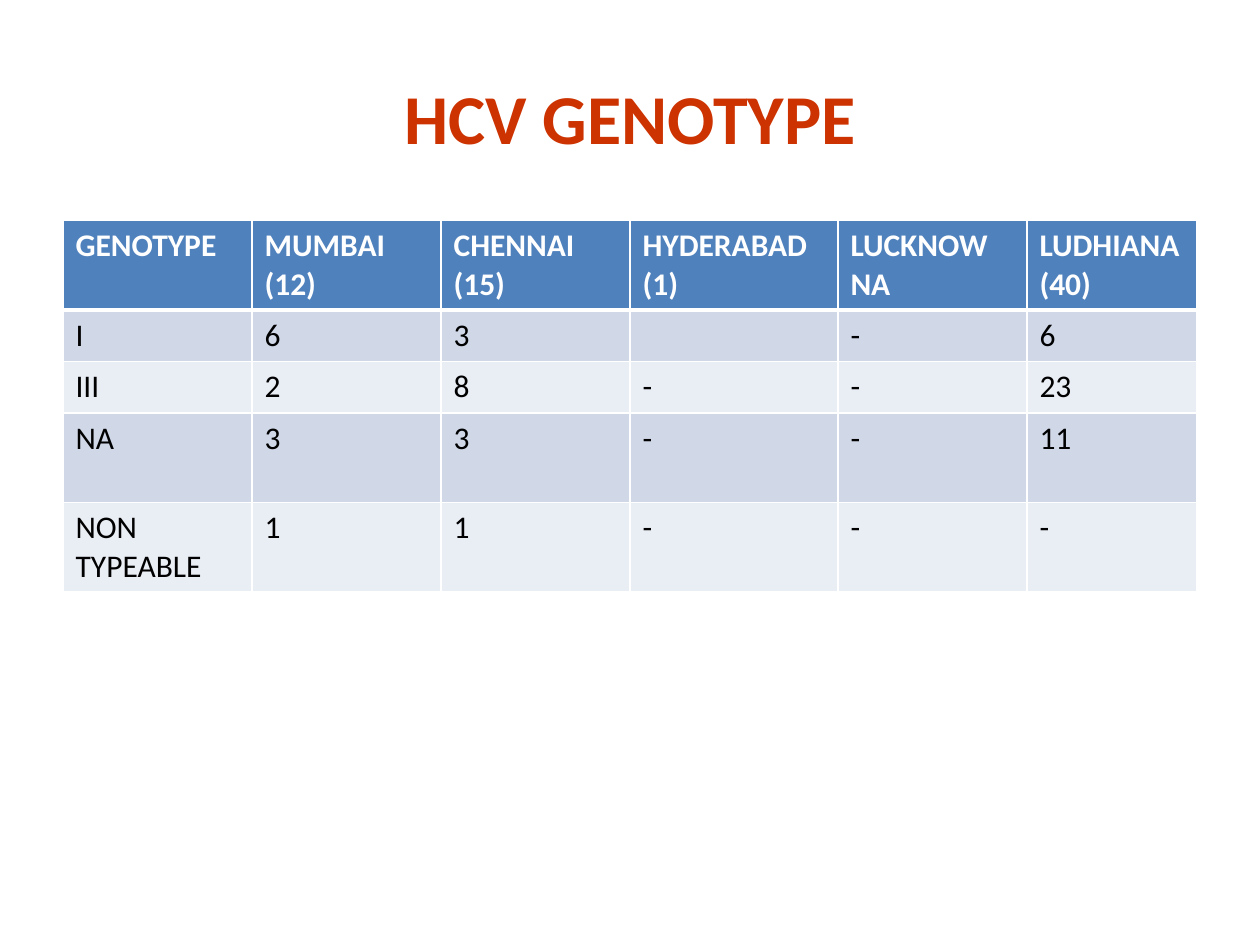
import pptx
import pptx.util
import pptx.dml.color
import pptx.enum.text
import pptx.oxml
import pptx.oxml.ns

Inches = pptx.util.Inches

# Content: each cell is a list of paragraphs
TITLE = "HCV GENOTYPE"
HEADER = [["GENOTYPE"], ["MUMBAI (12)"], ["CHENNAI", "(15)"],
          ["HYDERABAD (1)"], ["LUCKNOW", "NA"], ["LUDHIANA", "(40)"]]
BODY = [
    ["I", "6", "3", "", "-", "6"],
    ["III", "2", "8", "-", "-", "23"],
    ["NA", "3", "3", "-", "-", "11"],
    ["NON TYPEABLE", "1", "1", "-", "-", "-"],
]
COLUMN_WIDTHS = [1.5, 1.5, 1.5, 1.65, 1.5, 1.35]
ROW_HEIGHTS = [0.71, 0.41, 0.41, 0.71, 0.71]
HEADER_FILL = "4F81BD"
BAND_FILLS = ["D0D8E8", "E9EDF4"]


def color(value):
    return pptx.dml.color.RGBColor.from_string(value)


def add_text(paragraph, text, size, text_color, bold):
    run = paragraph.add_run()
    run.text = text
    run.font.name = "Calibri"
    run.font.size = pptx.util.Pt(size)
    run.font.bold = bold
    run.font.color.rgb = color(text_color)


def set_borders(cell, bottom_width, top_width):
    properties = cell._tc.get_or_add_tcPr()
    widths = {"lnL": 1, "lnR": 1, "lnT": top_width, "lnB": bottom_width}
    for position, (side, width) in enumerate(widths.items()):
        line = pptx.oxml.parse_xml(
            f'<a:{side} {pptx.oxml.ns.nsdecls("a")} w="{pptx.util.Pt(width)}">'
            f'<a:solidFill><a:srgbClr val="FFFFFF"/></a:solidFill></a:{side}>')
        properties.insert(position, line)


def fill_cell(cell, lines, row_index):
    is_header = row_index == 0
    cell.fill.solid()
    cell.fill.fore_color.rgb = color(
        HEADER_FILL if is_header else BAND_FILLS[(row_index - 1) % 2])
    set_borders(cell, 3 if is_header else 1, 3 if row_index == 1 else 1)
    frame = cell.text_frame
    for index, line in enumerate(lines):
        paragraph = frame.add_paragraph() if index else frame.paragraphs[0]
        if line:
            add_text(paragraph, line, 18, "FFFFFF" if is_header else "000000", is_header)


presentation = pptx.Presentation()
presentation.slide_width = Inches(10)
presentation.slide_height = Inches(7.5)
slide = presentation.slides.add_slide(presentation.slide_layouts[6])

# Title
title = slide.shapes.add_textbox(Inches(0.5), Inches(0.3), Inches(9), Inches(1.25))
title.text_frame.word_wrap = True
title.text_frame.vertical_anchor = pptx.enum.text.MSO_ANCHOR.MIDDLE
title_paragraph = title.text_frame.paragraphs[0]
title_paragraph.alignment = pptx.enum.text.PP_ALIGN.CENTER
add_text(title_paragraph, TITLE, 40, "CC3300", True)

# Genotype table
rows = [HEADER] + [[[value] for value in row] for row in BODY]
table = slide.shapes.add_table(
    len(rows), len(HEADER), Inches(0.5), Inches(1.75),
    Inches(sum(COLUMN_WIDTHS)), Inches(sum(ROW_HEIGHTS))).table
for column, width in zip(table.columns, COLUMN_WIDTHS):
    column.width = Inches(width)
for row_index, (row, height) in enumerate(zip(rows, ROW_HEIGHTS)):
    table.rows[row_index].height = Inches(height)
    for column_index, lines in enumerate(row):
        fill_cell(table.cell(row_index, column_index), lines, row_index)

presentation.save("out.pptx")
